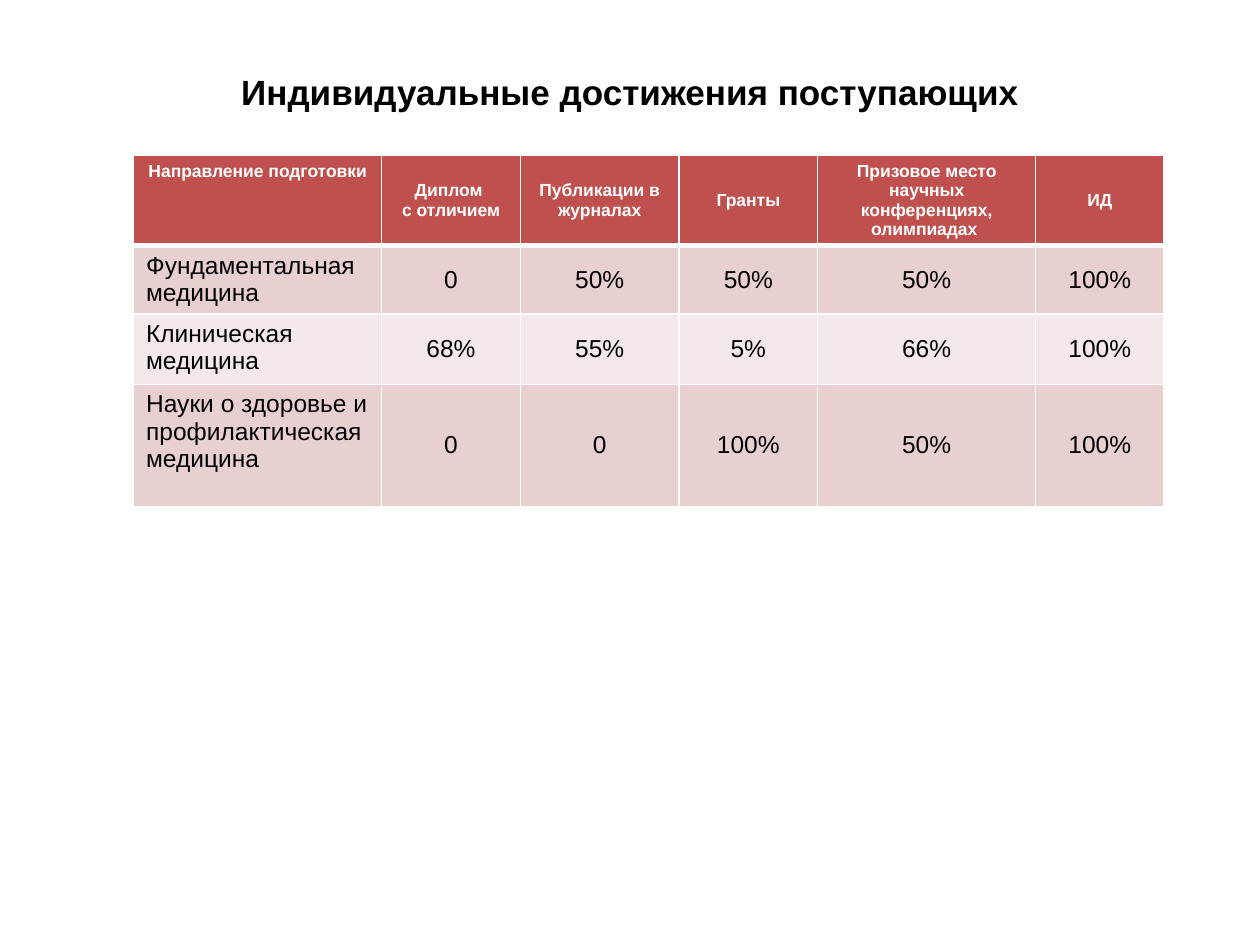
from lxml.etree import SubElement
from pptx import Presentation
from pptx.dml.color import RGBColor
from pptx.enum.text import MSO_ANCHOR as Anchor, PP_ALIGN as Align
from pptx.oxml.ns import qn
from pptx.util import Inches, Pt

BLACK = RGBColor(0x00, 0x00, 0x00)
WHITE = RGBColor(0xFF, 0xFF, 0xFF)
HEADER_RED = RGBColor(0xC0, 0x50, 0x4D)
BAND_DARK = RGBColor(0xE8, 0xD0, 0xD0)
BAND_LIGHT = RGBColor(0xF4, 0xE9, 0xE9)

TITLE = "Индивидуальные достижения поступающих"
COLUMN_WIDTHS = [1.97, 1.1, 1.26, 1.1, 1.73, 1.02]
ROW_HEIGHTS = [0.72, 0.54, 0.56, 0.97]
ROWS = [
    ["Направление подготовки", "Диплом \nс отличием", "Публикации в журналах",
     "Гранты", "Призовое место научных конференциях, олимпиадах ", "ИД"],
    ["Фундаментальная медицина", "0", "50%", "50%", "50%", "100%"],
    ["Клиническая медицина", "68%", "55%", "5%", "66%", "100%"],
    ["Науки о здоровье и профилактическая медицина",
     "0", "0", "100%", "50%", "100%"],
]


class SlideBuilder:
    font_name = "Arial"

    def __init__(self, page):
        self.page = page

    def style_text(self, frame, size, color, bold, align):
        for para in frame.paragraphs:
            para.alignment = align
            for span in para.runs:
                span.font.name = self.font_name
                span.font.size = Pt(size)
                span.font.bold = bold
                span.font.color.rgb = color

    def add_title(self, text, left, top, width, height):
        box = self.page.shapes.title
        box.left, box.top = Inches(left), Inches(top)
        box.width, box.height = Inches(width), Inches(height)
        box.text_frame.text = text
        box.text_frame.vertical_anchor = Anchor.MIDDLE
        self.style_text(box.text_frame, 20, BLACK, True, Align.CENTER)

    def add_borders(self, cell, bottom_width):
        properties = cell._tc.get_or_add_tcPr()
        for side, width in (("L", 1), ("R", 1), ("T", 1), ("B", bottom_width)):
            line = SubElement(properties, qn(f"a:ln{side}"), w=str(Pt(width)))
            fill = SubElement(line, qn("a:solidFill"))
            SubElement(fill, qn("a:srgbClr"), val=str(WHITE))

    def format_cell(self, cell, row, column):
        is_header = row == 0
        self.add_borders(cell, 3 if is_header else 1)
        cell.fill.solid()
        if is_header:
            cell.fill.fore_color.rgb = HEADER_RED
        else:
            cell.fill.fore_color.rgb = BAND_DARK if row % 2 else BAND_LIGHT
        cell.vertical_anchor = Anchor.MIDDLE if column else Anchor.TOP
        self.style_text(
            cell.text_frame,
            size=10 if is_header else 14,
            color=WHITE if is_header else BLACK,
            bold=is_header,
            align=Align.CENTER if is_header or column else Align.LEFT,
        )

    def add_table(self, rows, left, top, widths, heights):
        table = self.page.shapes.add_table(
            len(rows), len(widths), Inches(left), Inches(top),
            Inches(sum(widths)), Inches(sum(heights))).table
        for column, width in zip(table.columns, widths):
            column.width = Inches(width)
        for row, height in zip(table.rows, heights):
            row.height = Inches(height)
        for row, texts in enumerate(rows):
            for column, text in enumerate(texts):
                cell = table.cell(row, column)
                cell.text_frame.text = text
                self.format_cell(cell, row, column)


def main():
    deck = Presentation()
    deck.slide_width, deck.slide_height = Inches(10), Inches(7.5)
    title_only = deck.slide_layouts[5]
    builder = SlideBuilder(deck.slides.add_slide(title_only))
    builder.add_title(TITLE, 0.5, 0.3, 9, 0.85)
    builder.add_table(ROWS, 1.06, 1.23, COLUMN_WIDTHS, ROW_HEIGHTS)
    deck.save("out.pptx")


if __name__ == "__main__":
    main()
